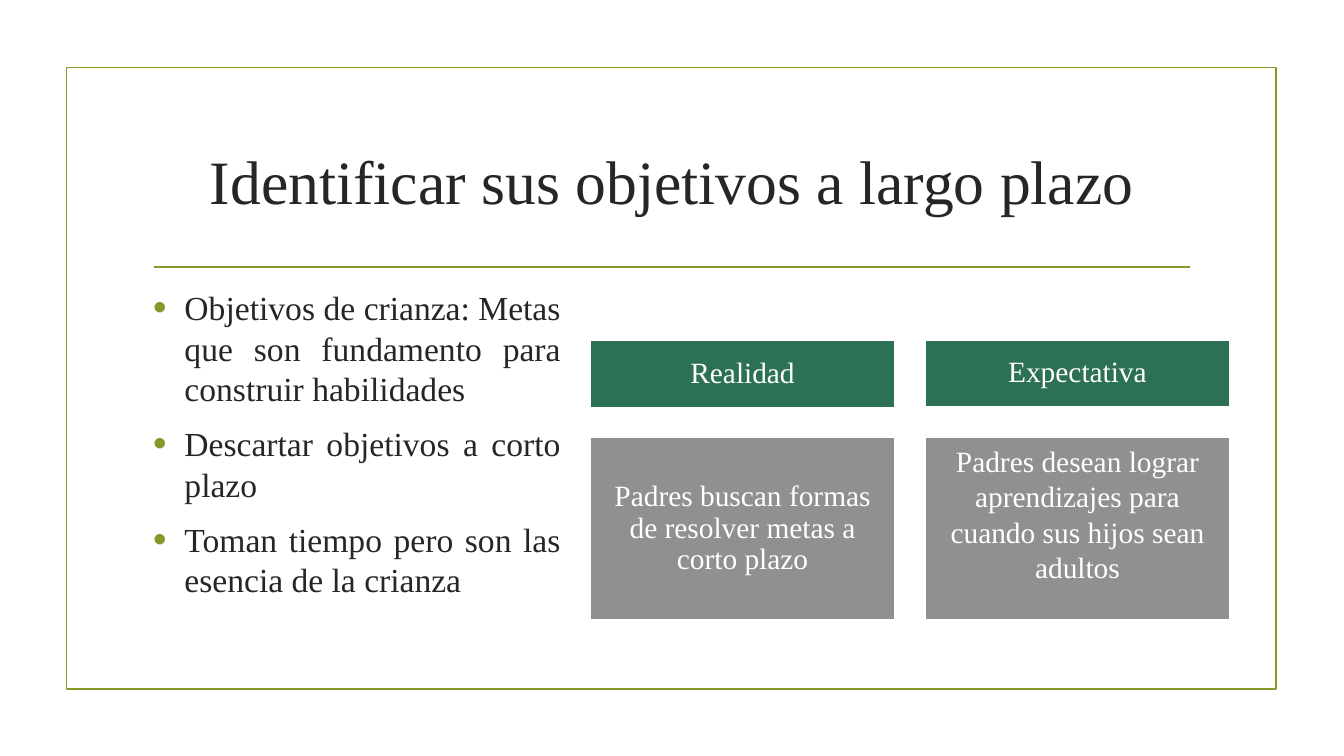
from lxml import etree
from pptx import Presentation
from pptx.dml.color import RGBColor
from pptx.enum.shapes import MSO_CONNECTOR as Connector, MSO_SHAPE as Shape
from pptx.enum.text import MSO_ANCHOR as Anchor, PP_ALIGN as Align
from pptx.oxml.ns import qn
from pptx.util import Cm, Pt

OLIVE = RGBColor(0x83, 0x99, 0x2A)
GREEN = RGBColor(0x2D, 0x71, 0x54)
GRAY = RGBColor(0x90, 0x90, 0x90)
INK = RGBColor(0x26, 0x26, 0x26)
WHITE = RGBColor(0xFF, 0xFF, 0xFF)


class GoalSlide:
    """Draws the styled elements of one slide."""

    font_name = "Times New Roman"
    line_width = Pt(1.25)

    def __init__(self, slide):
        self.slide = slide

    def style(self, paragraph, size, color, align):
        paragraph.alignment = align
        paragraph.font.name = self.font_name
        paragraph.font.size = Pt(size)
        paragraph.font.color.rgb = color

    def rectangle(self, left, top, width, height, line, fill=None):
        panel = self.slide.shapes.add_shape(
            Shape.RECTANGLE, Cm(left), Cm(top), Cm(width), Cm(height))
        panel.shadow.inherit = False
        panel.line.color.rgb = line
        panel.line.width = self.line_width
        if fill is None:
            panel.fill.background()
        else:
            panel.fill.solid()
            panel.fill.fore_color.rgb = fill
        return panel

    def rule(self, left, right, y):
        divider = self.slide.shapes.add_connector(
            Connector.STRAIGHT, Cm(left), Cm(y), Cm(right), Cm(y))
        divider.line.color.rgb = OLIVE
        divider.line.width = self.line_width
        etree.SubElement(divider.element.spPr, qn("a:effectLst"))

    def text_frame(self, left, top, width, height):
        frame = self.slide.shapes.add_textbox(
            Cm(left), Cm(top), Cm(width), Cm(height)).text_frame
        frame.word_wrap = True
        return frame

    def title(self, text, left, top, width, height):
        frame = self.text_frame(left, top, width, height)
        frame.vertical_anchor = Anchor.MIDDLE
        frame.text = text
        self.style(frame.paragraphs[0], 44, INK, Align.CENTER)

    def bullets(self, items, left, top, width, height):
        frame = self.text_frame(left, top, width, height)
        frame.text = "\n".join(items)
        for index, paragraph in enumerate(frame.paragraphs):
            paragraph.space_before = Pt(4.8 if index else 0)
            paragraph.space_after = Pt(6)
            properties = paragraph._p.get_or_add_pPr()
            properties.set("marL", str(Cm(0.79)))
            properties.set("indent", str(-Cm(0.79)))
            bullet_color = etree.SubElement(properties, qn("a:buClr"))
            etree.SubElement(bullet_color, qn("a:srgbClr"), val=str(OLIVE))
            etree.SubElement(properties, qn("a:buSzPct"), val="115000")
            etree.SubElement(properties, qn("a:buFont"), typeface="Arial")
            etree.SubElement(properties, qn("a:buChar"), char="•")
            self.style(paragraph, 24, INK, Align.JUSTIFY)

    def card(self, text, left, top, width, height, fill, spacing=0.9, lift=0):
        frame = self.rectangle(left, top, width, height, WHITE, fill).text_frame
        frame.word_wrap = True
        frame.vertical_anchor = Anchor.MIDDLE
        frame.margin_left = frame.margin_right = frame.margin_top = Cm(0.23)
        frame.margin_bottom = Cm(0.23 + lift)
        frame.text = text
        paragraph = frame.paragraphs[0]
        paragraph.line_spacing = spacing
        self.style(paragraph, 21, WHITE, Align.CENTER)


def main():
    deck = Presentation()
    deck.slide_width, deck.slide_height = Cm(33.87), Cm(19.05)
    goals = GoalSlide(deck.slides.add_slide(deck.slide_layouts[6]))

    goals.rectangle(1.68, 1.7, 30.48, 15.67, OLIVE)
    goals.rule(3.89, 30, 6.73)
    goals.title("Identificar sus objetivos a largo plazo", 3.61, 2.72, 26.67, 3.63)
    goals.bullets(
        ["Objetivos de crianza: Metas que son fundamento para construir habilidades",
         "Descartar objetivos a corto plazo",
         "Toman tiempo pero son las esencia de la crianza"],
        3.61, 7.11, 10.77, 9.22)

    columns = [
        ("Realidad", 1.73,
         "Padres buscan formas de resolver metas a corto plazo", 0.9, 0),
        ("Expectativa", 1.7,
         "Padres desean lograr aprendizajes para cuando sus hijos sean adultos", 1, 0.75),
    ]
    for index, (heading, heading_height, detail, spacing, lift) in enumerate(columns):
        left = 14.88 + index * 8.44
        goals.card(heading, left, 8.56, 7.67, heading_height, GREEN)
        goals.card(detail, left, 11.02, 7.67, 4.6, GRAY, spacing, lift)

    deck.save("out.pptx")


if __name__ == "__main__":
    main()
